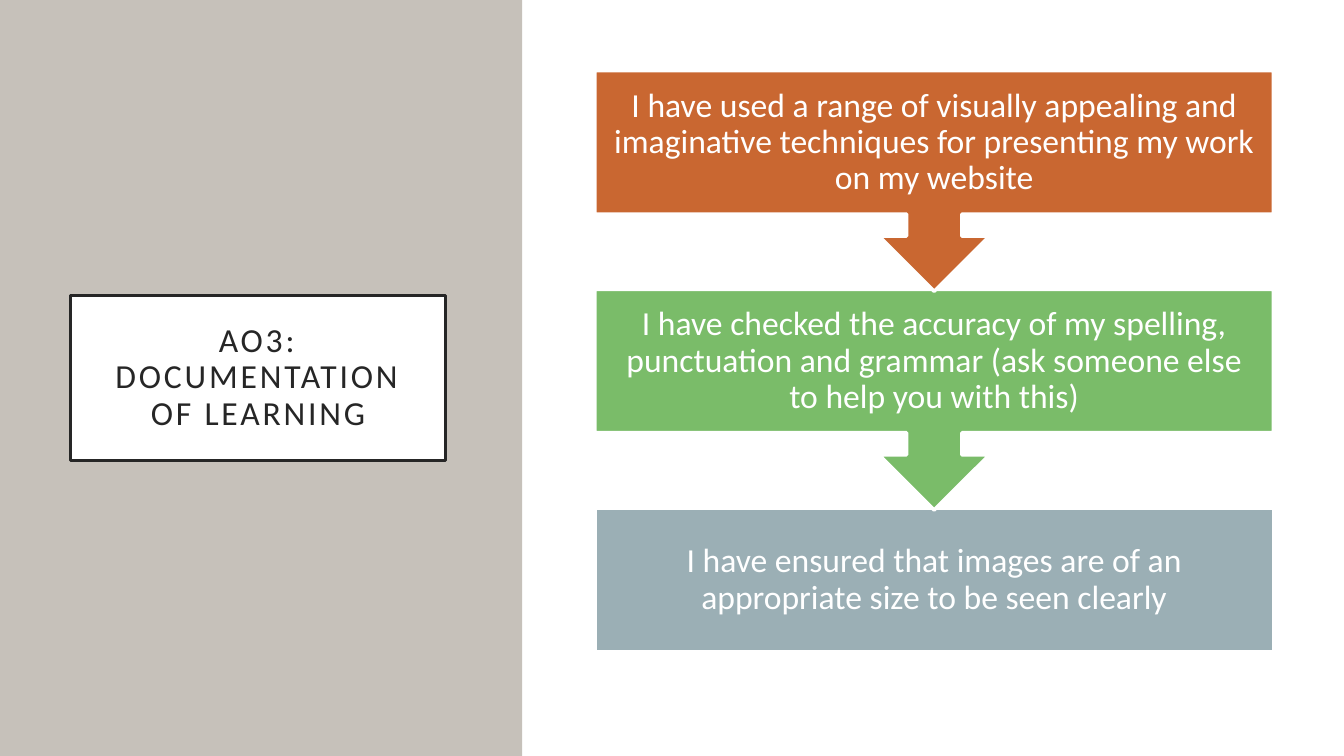
import pptx
import pptx.util
import pptx.dml.color
import pptx.enum.shapes
import pptx.enum.text

Inches = pptx.util.Inches
RGBColor = pptx.dml.color.RGBColor
Shapes = pptx.enum.shapes.MSO_SHAPE

WHITE = RGBColor(0xFF, 0xFF, 0xFF)
INK = RGBColor(0x26, 0x26, 0x26)
STONE = RGBColor(0xC6, 0xC1, 0xBA)
ORANGE = RGBColor(0xC9, 0x67, 0x31)
GREEN = RGBColor(0x7A, 0xBC, 0x69)
SLATE = RGBColor(0x9B, 0xAF, 0xB5)

HEADING = "AO3: DOCUMENTATION OF LEARNING"
CHECKLIST = [
    ("I have used a range of visually appealing and imaginative techniques "
     "for presenting my work on my website", ORANGE),
    ("I have checked the accuracy of my spelling, punctuation and grammar "
     "(ask someone else to help you with this)", GREEN),
    ("I have ensured that images are of an appropriate size to be seen clearly", SLATE),
]

WIDTH, HEIGHT = 13.33, 7.5
PANEL_WIDTH, STEPS_LEFT = 5.18, 5.2
STEP_LEFT, STEP_TOP, STEP_WIDTH = 5.9, 0.7, 6.73
STEP_PITCH, CALLOUT_HEIGHT, BOX_HEIGHT = 2.17, 2.19, 1.43
BORDER = pptx.util.Pt(2.5)
FONT = {"name": "Calibri", "size": pptx.util.Pt(24), "bold": False}


def frame_format(inset):
    margins = {f"margin_{side}": Inches(inset) for side in ("left", "top", "right", "bottom")}
    return {
        "word_wrap": True,
        "auto_size": pptx.enum.text.MSO_AUTO_SIZE.NONE,
        "vertical_anchor": pptx.enum.text.MSO_ANCHOR.MIDDLE,
        **margins,
    }


def apply(target, values):
    for attribute, value in values.items():
        setattr(target, attribute, value)


def write(holder, wording, color, inset):
    frame = holder.text_frame
    apply(frame, frame_format(inset))
    frame.text = wording
    line = frame.paragraphs[0]
    apply(line, {"alignment": pptx.enum.text.PP_ALIGN.CENTER, "line_spacing": 0.9})
    run = line.runs[0]
    apply(run.font, FONT)
    run.font.color.rgb = color
    return run


def paint(shape, fill, border=None):
    shape.fill.solid()
    shape.fill.fore_color.rgb = fill
    if border is None:
        shape.line.fill.background()
    else:
        shape.line.color.rgb = border
        shape.line.width = BORDER


def add_block(slide, kind, place, fill, border=None):
    block = slide.shapes.add_shape(kind, *map(Inches, place))
    block.shadow.inherit = False
    paint(block, fill, border)
    return block


def add_heading(slide):
    title = slide.shapes.title
    places = dict(zip(("left", "top", "width", "height"), map(Inches, (0.7, 2.93, 3.72, 1.64))))
    apply(title, places)
    paint(title, WHITE, INK)
    run = write(title, HEADING, INK, 0.2)
    run.font._element.set("spc", "200")


def add_step(slide, index):
    wording, color = CHECKLIST[index]
    top = STEP_TOP + index * STEP_PITCH
    box = (STEP_LEFT, top, STEP_WIDTH, BOX_HEIGHT)
    if index == len(CHECKLIST) - 1:
        add_block(slide, Shapes.RECTANGLE, box, color, WHITE)
    else:
        callout = add_block(slide, Shapes.UP_ARROW_CALLOUT,
                            (STEP_LEFT, top, STEP_WIDTH, CALLOUT_HEIGHT), color, WHITE)
        callout.rotation = 180
    write(slide.shapes.add_textbox(*map(Inches, box)), wording, WHITE, 0.19)


def main():
    deck = pptx.Presentation()
    apply(deck, {"slide_width": Inches(WIDTH), "slide_height": Inches(HEIGHT)})
    slide = deck.slides.add_slide(deck.slide_layouts[5])
    panel = add_block(slide, Shapes.RECTANGLE, (0, 0, PANEL_WIDTH, HEIGHT), STONE)
    slide.shapes.title._element.addprevious(panel._element)
    add_heading(slide)
    add_block(slide, Shapes.RECTANGLE, (STEPS_LEFT, 0, WIDTH - STEPS_LEFT, HEIGHT), WHITE)
    for index in reversed(range(len(CHECKLIST))):
        add_step(slide, index)
    deck.save("out.pptx")


if __name__ == "__main__":
    main()
